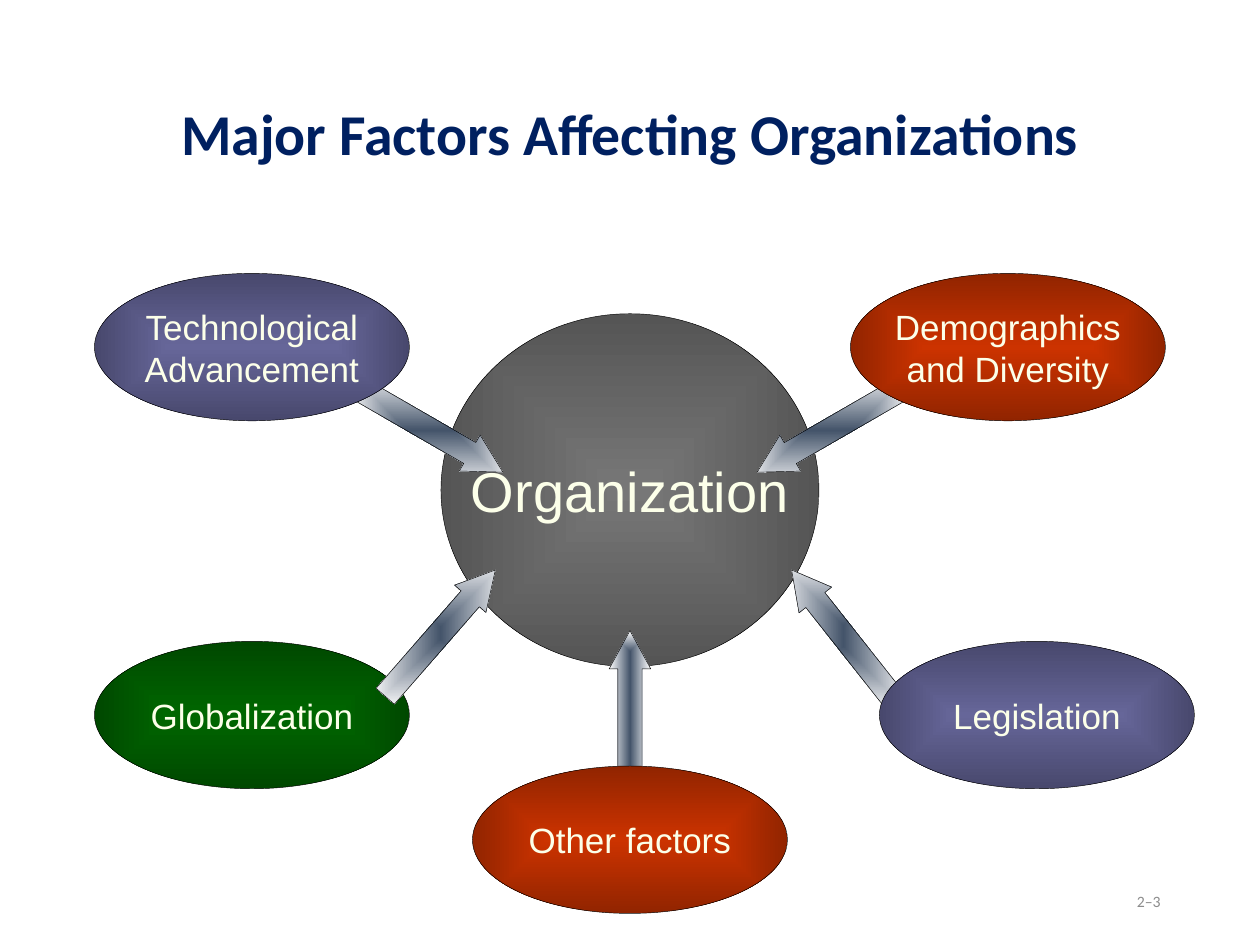
"""Build a slide of the major factors that affect organizations."""
from dataclasses import dataclass

import pptx
import pptx.dml.color
import pptx.enum.shapes
import pptx.enum.text
import pptx.oxml
import pptx.oxml.ns
import pptx.util

Inches = pptx.util.Inches
Shapes = pptx.enum.shapes.MSO_SHAPE
Align = pptx.enum.text.PP_ALIGN


@dataclass(frozen=True)
class Theme:
    heading_font: str = "Calibri"
    label_font: str = "Arial"
    navy: str = "002060"
    cream: str = "FCFFE9"
    muted: str = "8C8C8C"
    outline: str = "000000"
    gray: str = "777777"
    violet: str = "666699"
    red: str = "CC3300"
    green: str = "006600"
    steel: str = "44546A"
    white: str = "FFFFFF"
    title_size: int = 33
    center_size: int = 32
    factor_size: int = 20
    number_size: int = 9
    edge_shade: int = 46275


THEME = Theme()
FACTOR_SIZE = (2.5, 1.17)


def rgb(value):
    return pptx.dml.color.RGBColor.from_string(value)


def write(box, lines, font, size, color, align=Align.CENTER, bold=False):
    """Write lines as runs of one middle-anchored paragraph."""
    box.text_frame.vertical_anchor = pptx.enum.text.MSO_ANCHOR.MIDDLE
    para = box.text_frame.paragraphs[0]
    para.alignment = align
    for index, line in enumerate(lines):
        if index:
            para.add_line_break()
        span = para.add_run()
        span.text = line
        span.font.name = font
        span.font.size = pptx.util.Pt(size)
        span.font.bold = bold
        span.font.color.rgb = rgb(color)
    return para


def fill_from_center(shape, kind, inner, outer, shade=None):
    """Fill a shape with a gradient that spreads from its center."""
    shape.fill.gradient()
    plain = shape.element.spPr.find(pptx.oxml.ns.qn("a:gradFill"))
    edge = f'<a:shade val="{shade}"/>' if shade else ""
    gradient = pptx.oxml.parse_xml(
        f'<a:gradFill {pptx.oxml.ns.nsdecls("a")} rotWithShape="1"><a:gsLst>'
        f'<a:gs pos="0"><a:srgbClr val="{inner}"/></a:gs>'
        f'<a:gs pos="100000"><a:srgbClr val="{outer}">{edge}</a:srgbClr></a:gs>'
        f'</a:gsLst><a:path path="{kind}">'
        '<a:fillToRect l="50000" t="50000" r="50000" b="50000"/>'
        '</a:path></a:gradFill>')
    plain.getparent().replace(plain, gradient)


def add_outlined(page, preset, left, top, width, height):
    """Add a preset shape with a thin outline and no shadow."""
    shape = page.shapes.add_shape(
        preset, Inches(left), Inches(top), Inches(width), Inches(height))
    shape.shadow.inherit = False
    shape.line.color.rgb = rgb(THEME.outline)
    shape.line.width = pptx.util.Pt(0.25)
    return shape


def add_oval(page, lines, left, top, color, extent=FACTOR_SIZE,
             size=THEME.factor_size):
    """Add a labelled oval that darkens towards its edge."""
    oval = add_outlined(page, Shapes.OVAL, left, top, *extent)
    fill_from_center(oval, "shape", color, color, THEME.edge_shade)
    oval.text_frame.word_wrap = False
    write(oval, lines, THEME.label_font, size, THEME.cream)


def add_arrow(page, left, top, angle, length=1.33):
    """Add a block arrow turned clockwise by an angle in degrees."""
    arrow = add_outlined(page, Shapes.RIGHT_ARROW, left, top, length, 0.33)
    arrow.rotation = angle
    arrow.adjustments[0], arrow.adjustments[1] = 0.58, 0.92
    fill_from_center(arrow, "rect", THEME.steel, THEME.white)


def add_title(page, text):
    """Place and format the title placeholder."""
    box = page.shapes.title
    box.left, box.top = Inches(0.5), Inches(0.67)
    box.width, box.height = Inches(9), Inches(0.83)
    para = write(box, [text], THEME.heading_font, THEME.title_size,
                 THEME.navy, bold=True)
    para.line_spacing = 0.9


def add_page_number(page, text):
    """Add the page number at the lower right."""
    box = page.shapes.add_textbox(
        Inches(7.06), Inches(6.95), Inches(2.25), Inches(0.4))
    box.text_frame.word_wrap = True
    write(box, [text], THEME.heading_font, THEME.number_size,
          THEME.muted, Align.RIGHT)


def main():
    """Build and save the deck."""
    deck = pptx.Presentation()
    deck.slide_width, deck.slide_height = Inches(10), Inches(7.5)
    page = deck.slides.add_slide(deck.slide_layouts[5])
    add_title(page, "Major Factors Affecting Organizations")
    add_page_number(page, "2–3")
    add_oval(page, ["Organization"], 3.5, 2.49, THEME.gray, (3, 2.8),
             THEME.center_size)
    add_arrow(page, 2.75, 3.25, 30)
    add_oval(page, ["Technological", "Advancement"], 0.75, 2.17, THEME.violet)
    add_arrow(page, 5.92, 3.25, 150)
    add_oval(page, ["Demographics", "and Diversity"], 6.75, 2.17, THEME.red)
    add_arrow(page, 6.03, 4.88, 231.7)
    add_oval(page, ["Globalization"], 0.75, 5.09, THEME.green)
    add_arrow(page, 2.83, 4.86, 311.1)
    add_oval(page, ["Legislation"], 6.98, 5.09, THEME.violet)
    add_arrow(page, 4.37, 5.47, 270, 1.26)
    add_oval(page, ["Other factors"], 3.75, 6.08, THEME.red)
    deck.save("out.pptx")


if __name__ == "__main__":
    main()
